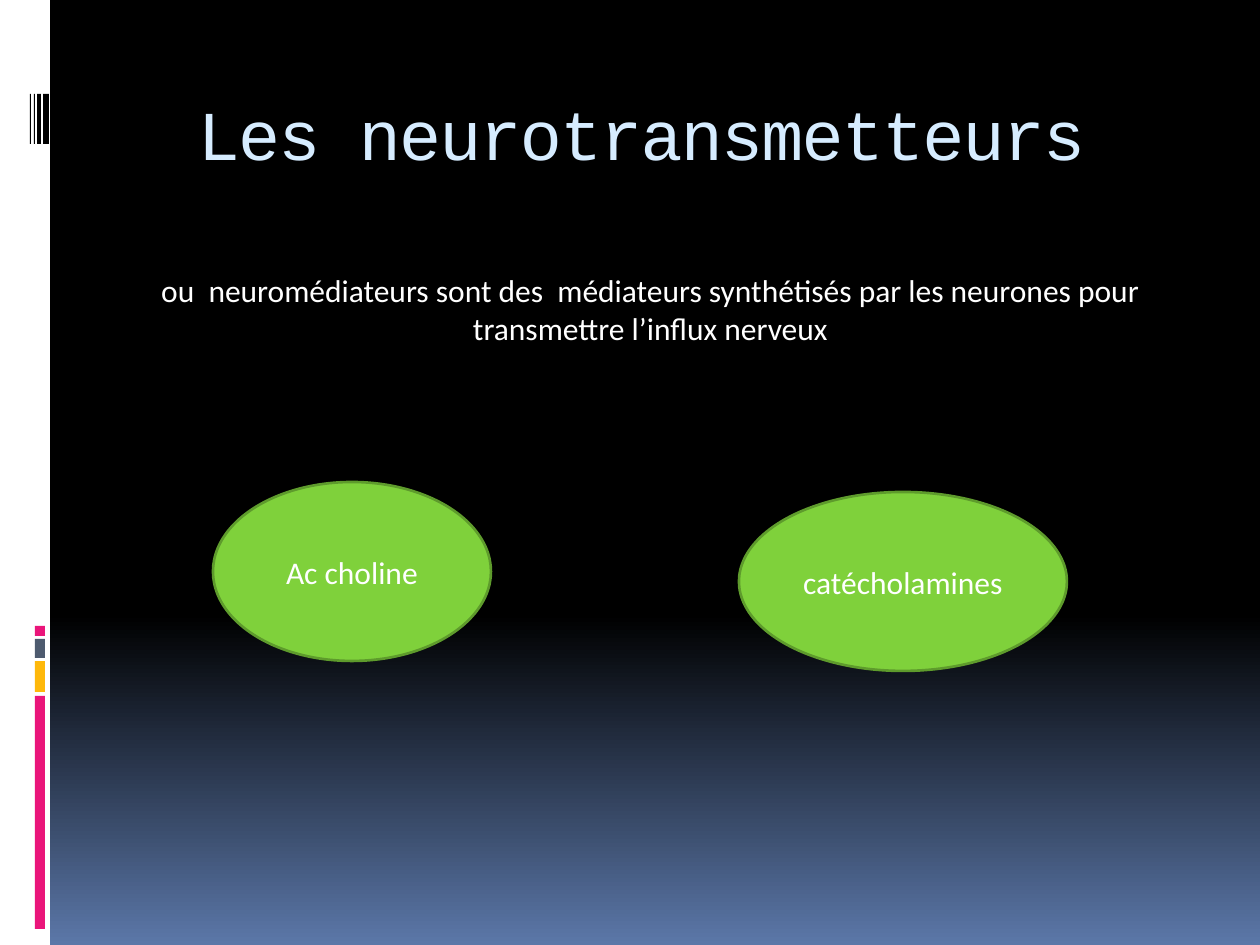
from pptx import Presentation
from pptx.dml.color import RGBColor
from pptx.enum.shapes import MSO_SHAPE
from pptx.enum.text import MSO_ANCHOR, PP_ALIGN
from pptx.util import Pt

EMU_PER_PX = 914400 / 126
RECTANGLE, OVAL = MSO_SHAPE.RECTANGLE, MSO_SHAPE.OVAL
TOP, MIDDLE, CENTER = MSO_ANCHOR.TOP, MSO_ANCHOR.MIDDLE, PP_ALIGN.CENTER
TITLE_ONLY = 5

BLACK = RGBColor(0x00, 0x00, 0x00)
WHITE = RGBColor(0xFF, 0xFF, 0xFF)
BLUE = RGBColor(0x5B, 0x77, 0xA8)
PALE_BLUE = RGBColor(0xD6, 0xEC, 0xFF)
PINK = RGBColor(0xEA, 0x15, 0x7A)
AMBER = RGBColor(0xFE, 0xB8, 0x0A)
SLATE = RGBColor(0x4E, 0x5B, 0x6F)
GREEN = RGBColor(0x7F, 0xD1, 0x3B)
DARK_GREEN = RGBColor(0x5E, 0x9B, 0x2C)


def px(length):
    return round(length * EMU_PER_PX)


def write(frame, text, font="Calibri", size=18, color=WHITE, anchor=MIDDLE, spacing=0):
    frame.word_wrap = True
    frame.vertical_anchor = anchor
    paragraph = frame.paragraphs[0]
    paragraph.alignment = CENTER
    run = paragraph.add_run()
    run.text = text
    run.font.name = font
    run.font.size = Pt(size)
    run.font.color.rgb = color
    if spacing:
        run._r.get_or_add_rPr().set("spc", str(spacing * 100))


def add_filled(slide, kind, box, color, outline=None):
    shape = slide.shapes.add_shape(kind, *map(px, box))
    shape.shadow.inherit = False
    shape.fill.solid()
    shape.fill.fore_color.rgb = color
    if outline is None:
        shape.line.fill.background()
    else:
        shape.line.color.rgb = outline
        shape.line.width = Pt(1.5)
    return shape


def paint_background(slide):
    fill = slide.background.fill
    fill.gradient()
    fill.gradient_angle = 270
    for stop, position, color in zip(fill.gradient_stops, (0.65, 1), (BLACK, BLUE)):
        stop.position = position
        stop.color.rgb = color


def add_side_band(slide):
    add_filled(slide, RECTANGLE, (0, 0, 50, 945), WHITE)
    for top, height, color in ((696, 233, PINK), (661, 31, AMBER),
                               (639, 19, SLATE), (626, 10, PINK)):
        add_filled(slide, RECTANGLE, (35, top, 10, height), color)
    for left, width in ((43, 6), (37, 4), (34, 1), (30, 1)):
        add_filled(slide, RECTANGLE, (left, 94, width, 50), BLACK)


def add_title(slide, text):
    title = slide.shapes.title
    title.left, title.top, title.width, title.height = map(px, (126, 70, 1071, 126))
    write(title.text_frame, text, font="Courier New", size=40, color=PALE_BLUE, spacing=-1)


def add_definition(slide, text):
    definition = slide.shapes.add_textbox(*map(px, (115, 265, 1071, 89)))
    write(definition.text_frame, text, anchor=TOP)


def add_transmitter(slide, text, box):
    transmitter = add_filled(slide, OVAL, box, GREEN, DARK_GREEN)
    write(transmitter.text_frame, text)


def main():
    presentation = Presentation()
    presentation.slide_width, presentation.slide_height = px(1260), px(945)
    slide = presentation.slides.add_slide(presentation.slide_layouts[TITLE_ONLY])
    paint_background(slide)
    add_side_band(slide)
    add_title(slide, "Les neurotransmetteurs ")
    add_definition(slide, "ou  neuromédiateurs sont des  médiateurs synthétisés "
                          "par les neurones pour transmettre l’influx nerveux")
    add_transmitter(slide, "Ac choline", (213, 482, 278, 179))
    add_transmitter(slide, "catécholamines", (739, 492, 328, 179))
    presentation.save("out.pptx")


if __name__ == "__main__":
    main()
